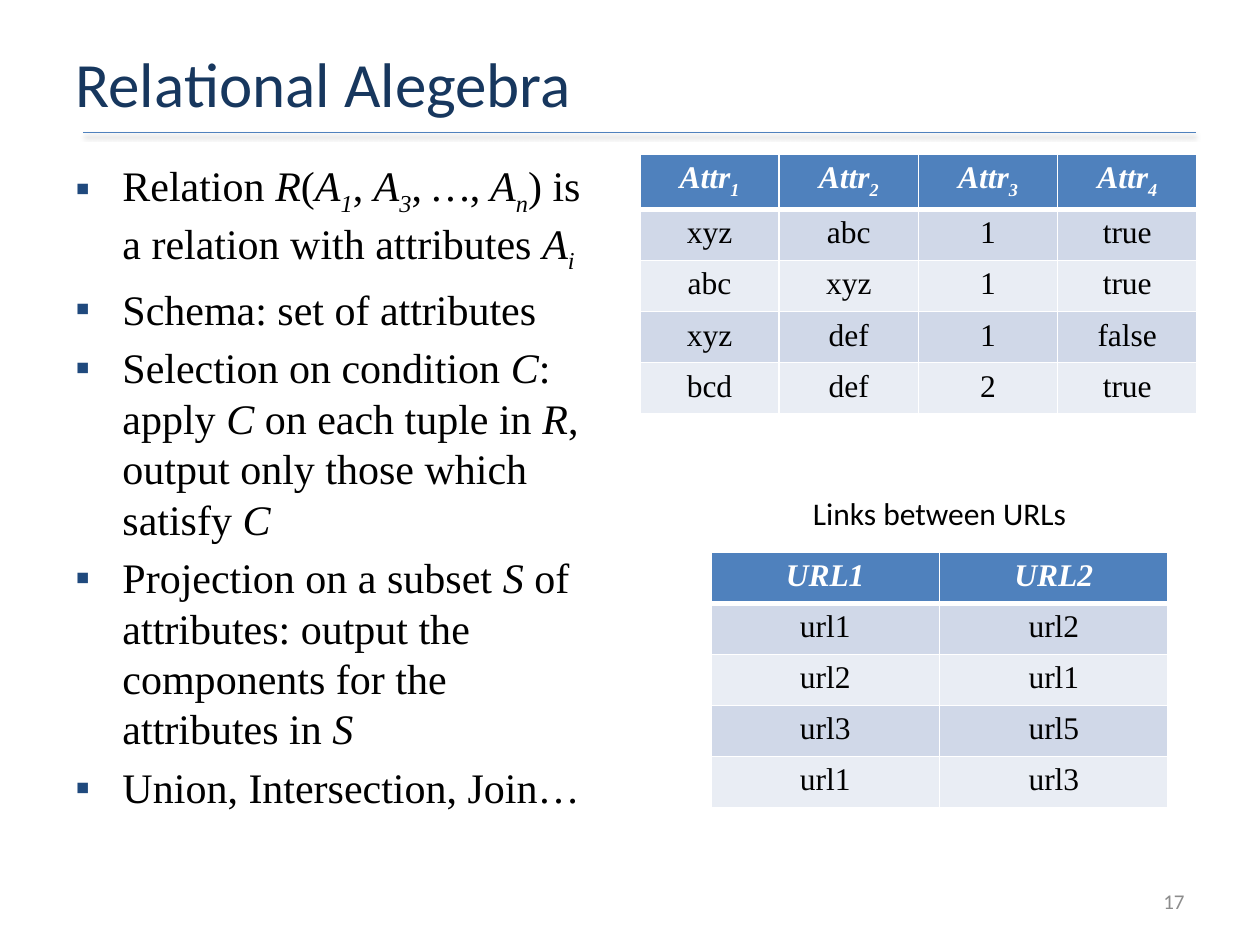
from dataclasses import dataclass

from lxml import etree
from pptx import Presentation
from pptx import util as u
from pptx.dml.color import RGBColor
from pptx.enum import shapes, text
from pptx.oxml import parse_xml
from pptx.oxml.ns import nsdecls, qn

NAVY = RGBColor(0x17, 0x37, 0x5E)
BULLET = RGBColor(0x1F, 0x49, 0x7D)
BLUE = RGBColor(0x4F, 0x81, 0xBD)
BAND_DARK = RGBColor(0xD0, 0xD8, 0xE8)
BAND_LIGHT = RGBColor(0xE9, 0xED, 0xF4)
GRAY = RGBColor(0x8C, 0x8C, 0x8C)
BLACK = RGBColor(0, 0, 0)
WHITE = RGBColor(0xFF, 0xFF, 0xFF)
SANS = "Calibri"
SERIF = "Times New Roman"
ROW_HEIGHT = 1.03


@dataclass
class Box:
    left: float
    top: float
    width: float
    height: float

    def lengths(self) -> tuple:
        return tuple(u.Cm(n) for n in (self.left, self.top, self.width, self.height))


@dataclass
class TableData:
    left: float
    top: float
    width: float
    rows: list


BULLETS = [
    "Relation *R*(*A_1_*, *A_3_*,* …*,* A_n_*) is a relation with attributes *A_i_*",
    "Schema: set of attributes",
    "Selection on condition *C*: apply *C *on each tuple in *R*, "
    "output only those which satisfy *C*",
    "Projection on a subset *S *of attributes: output the components "
    "for the attributes in *S*",
    "Union, Intersection, Join…",
]

TABLES = [
    TableData(12.9, 3.1, 11.23, [
        ["*Attr_1_*", "*Attr_2_*", "*Attr_3_*", "*Attr_4_*"],
        ["xyz", "abc", "1", "true"],
        ["abc", "xyz", "1", "true"],
        ["xyz", "def", "1", "false"],
        ["bcd", "def", "2", "true"],
    ]),
    TableData(14.33, 11.13, 9.22, [
        ["*URL1*", "*URL2*"],
        ["url1", "url2"],
        ["url2", "url1"],
        ["url3", "url5"],
        ["url1", "url3"],
    ]),
]


def write(paragraph, content: str, *, size: float, font: str = SERIF,
          color: RGBColor = BLACK, bold: bool = False,
          align=text.PP_ALIGN.LEFT) -> None:
    """Asterisks enclose italics; underscores enclose subscripts."""
    paragraph.alignment = align
    for i, piece in enumerate(content.split("*")):
        for j, part in enumerate(piece.split("_")):
            if not part:
                continue
            run = paragraph.add_run()
            run.text = part
            run.font.size = u.Pt(size)
            run.font.name = font
            run.font.color.rgb = color
            run.font.bold = bold
            run.font.italic = i % 2 == 1
            if j % 2:
                run._r.get_or_add_rPr().set("baseline", "-25000")


def add_text_box(slide, box: Box, anchor=text.MSO_ANCHOR.TOP):
    frame = slide.shapes.add_textbox(*box.lengths()).text_frame
    frame.word_wrap = True
    frame.vertical_anchor = anchor
    return frame


def add_bullet(paragraph) -> None:
    paragraph.space_before = u.Pt(4.8)
    properties = paragraph._p.get_or_add_pPr()
    properties.set("marL", str(u.Cm(0.95)))
    properties.set("indent", str(-u.Cm(0.95)))
    color = etree.SubElement(properties, qn("a:buClr"))
    etree.SubElement(color, qn("a:srgbClr"), val=str(BULLET))
    etree.SubElement(properties, qn("a:buFont"), typeface=SERIF)
    etree.SubElement(properties, qn("a:buChar"), char="▪")


def set_borders(cell, top: float, bottom: float) -> None:
    properties = cell._tc.get_or_add_tcPr()
    widths = {"lnL": 1, "lnR": 1, "lnT": top, "lnB": bottom}
    for index, (side, width) in enumerate(widths.items()):
        properties.insert(index, parse_xml(
            f'<a:{side} {nsdecls("a")} w="{u.Pt(width)}"><a:solidFill>'
            f'<a:srgbClr val="{WHITE}"/></a:solidFill></a:{side}>'))


def add_data_table(slide, data: TableData) -> None:
    row_count, column_count = len(data.rows), len(data.rows[0])
    box = Box(data.left, data.top, data.width, ROW_HEIGHT * row_count)
    table = slide.shapes.add_table(row_count, column_count, *box.lengths()).table
    for row_index, values in enumerate(data.rows):
        header = row_index == 0
        band = BAND_DARK if row_index % 2 else BAND_LIGHT
        for column_index, value in enumerate(values):
            cell = table.cell(row_index, column_index)
            cell.fill.solid()
            cell.fill.fore_color.rgb = BLUE if header else band
            set_borders(cell, 3 if row_index == 1 else 1, 3 if header else 1)
            write(cell.text_frame.paragraphs[0], value, size=18, bold=header,
                  color=WHITE if header else BLACK, align=text.PP_ALIGN.CENTER)


def add_title_rule(slide) -> None:
    rule = slide.shapes.add_connector(
        shapes.MSO_CONNECTOR.STRAIGHT,
        u.Cm(1.68), u.Cm(2.67), u.Cm(24.1), u.Cm(2.67))
    rule.line.color.rgb = BLUE
    rule.line.width = u.Pt(1)
    rule._element.spPr.append(parse_xml(
        f'<a:effectLst {nsdecls("a")}><a:outerShdw blurRad="{u.Pt(3.1)}" '
        f'dist="{u.Pt(1.6)}" dir="5400000" rotWithShape="0">'
        f'<a:srgbClr val="{BLACK}"><a:alpha val="38000"/></a:srgbClr>'
        '</a:outerShdw></a:effectLst>'))


def main() -> None:
    presentation = Presentation()
    presentation.slide_width, presentation.slide_height = u.Cm(25.4), u.Cm(19.05)
    slide = presentation.slides.add_slide(presentation.slide_layouts[5])
    add_title_rule(slide)

    title = slide.shapes.title
    title.left, title.top, title.width, title.height = Box(1.27, 0.76, 22.86, 1.8).lengths()
    title.text_frame.vertical_anchor = text.MSO_ANCHOR.MIDDLE
    write(title.text_frame.paragraphs[0], "Relational Alegebra",
          size=36, font=SANS, color=NAVY)

    body = add_text_box(slide, Box(1.27, 3.1, 11.23, 13.92))
    for index, content in enumerate(BULLETS):
        paragraph = body.add_paragraph() if index else body.paragraphs[0]
        write(paragraph, content, size=24)
        add_bullet(paragraph)

    for data in TABLES:
        add_data_table(slide, data)

    caption = add_text_box(slide, Box(14.33, 9.83, 9.22, 1.02))
    write(caption.paragraphs[0], "Links between URLs", size=18, font=SANS,
          align=text.PP_ALIGN.CENTER)
    number = add_text_box(slide, Box(18.21, 17.65, 5.92, 1.02), text.MSO_ANCHOR.MIDDLE)
    write(number.paragraphs[0], "17", size=12, font=SANS, color=GRAY,
          align=text.PP_ALIGN.RIGHT)
    presentation.save("out.pptx")


if __name__ == "__main__":
    main()
